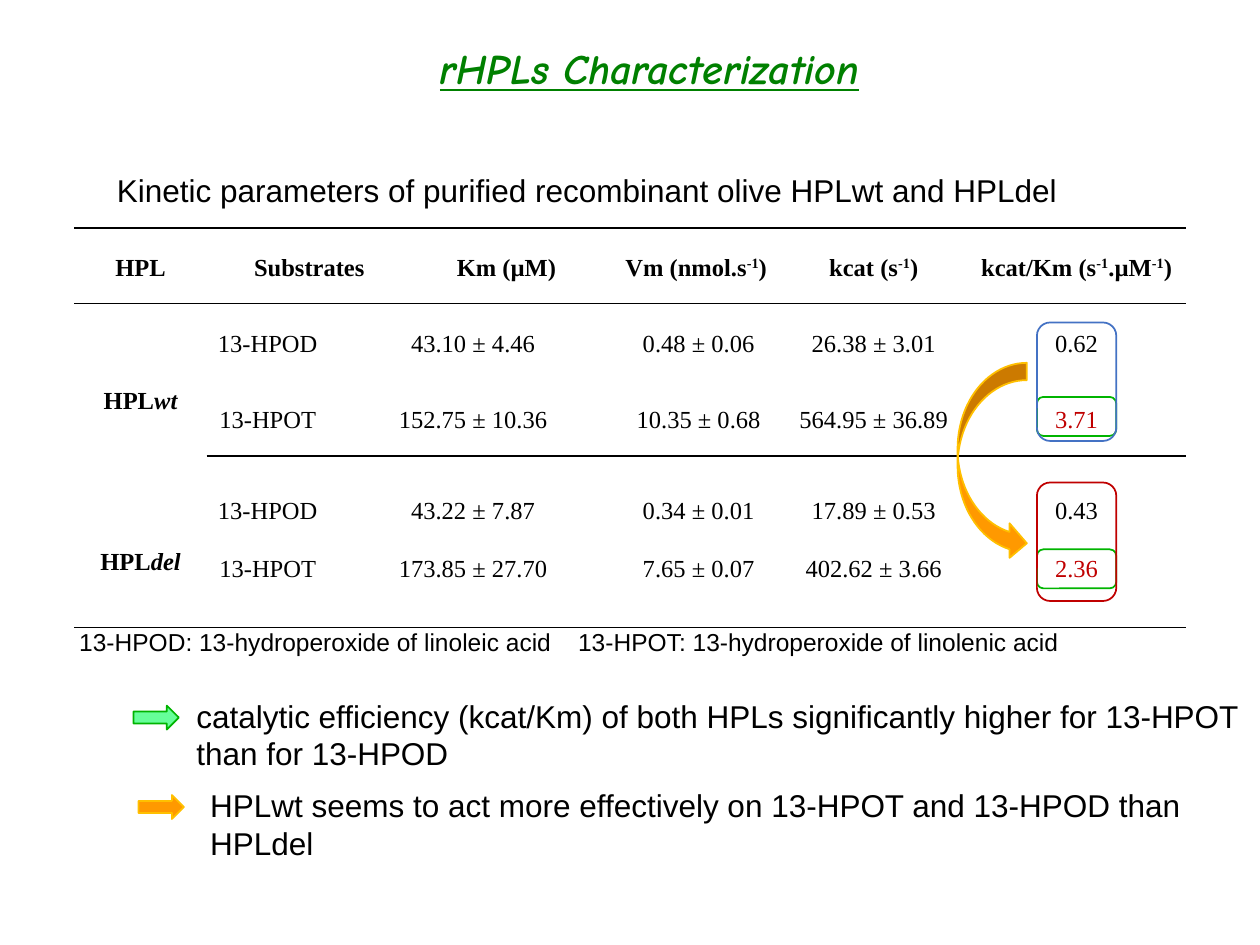
from lxml.etree import SubElement
from pptx import Presentation
from pptx.dml.color import RGBColor
from pptx.enum.shapes import MSO_SHAPE as Shape
from pptx.enum.text import MSO_ANCHOR as Anchor, MSO_AUTO_SIZE as AutoSize, PP_ALIGN as Align
from pptx.oxml import parse_xml
from pptx.oxml.ns import nsdecls, qn
from pptx.util import Inches, Pt

COLORS = {
    "black": "000000", "title": "008000", "green": "00B400", "mint": "66FF99",
    "orange": "FF9900", "gold": "FFC000", "blue": "4472C4", "red": "C00000",
}
NO_TABLE_STYLE = "{2D5ABB26-0587-4C30-8999-92F81FD0307C}"
COLUMN_WIDTHS = [1.05, 0.97, 0.66, 1.5, 0.13, 1.29, 1.49, 1.73]
ROW_HEIGHTS = [0.6, 0.61, 0.6, 0.3, 0.46, 0.6]
SPACER_ROW = 3

# Header texts by column; "^" starts and ends a superscript
HEADERS = {0: "HPL", 1: "Substrates", 3: "Km (µM)", 4: "Vm (nmol.s^-1^)",
           6: "kcat (s^-1^)", 7: "kcat/Km (s^-1^.µM^-1^)"}
VALUE_COLUMNS = [1, 2, 5, 6, 7]
MEASUREMENTS = {
    1: ["13-HPOD", "43.10 ± 4.46", "0.48 ± 0.06", "26.38 ± 3.01", "0.62"],
    2: ["13-HPOT", "152.75 ± 10.36", "10.35 ± 0.68", "564.95 ± 36.89", "3.71"],
    4: ["13-HPOD", "43.22 ± 7.87", "0.34 ± 0.01", "17.89 ± 0.53", "0.43"],
    5: ["13-HPOT", "173.85 ± 27.70", "7.65 ± 0.07", "402.62 ± 3.66", "2.36"],
}
ENZYMES = {1: "wt", 4: "del"}


def rgb(name):
    return RGBColor.from_string(COLORS[name])


def style(paragraph, size, face, color="black", bold=False):
    font = paragraph.font
    font.size, font.name, font.bold = Pt(size), face, bold
    font.color.rgb = rgb(color)


def add_title(slide, text):
    title = slide.shapes.title
    title.left, title.top, title.width, title.height = map(Inches, (2.4, 0.29, 5.51, 0.5))
    frame = title.text_frame
    frame.text = text
    frame.auto_size = AutoSize.NONE
    frame.vertical_anchor = Anchor.TOP
    paragraph = frame.paragraphs[0]
    paragraph.alignment = Align.CENTER
    style(paragraph, 24, "Comic Neue", "title", bold=True)
    paragraph.font.italic = paragraph.font.underline = True


def add_text(slide, box, lines, size=18, tab=None):
    frame = slide.shapes.add_textbox(*map(Inches, box)).text_frame
    frame.word_wrap = True
    frame.text = "\n".join(lines)
    for paragraph in frame.paragraphs:
        if tab:
            stops = SubElement(paragraph._p.get_or_add_pPr(), qn("a:tabLst"))
            SubElement(stops, qn("a:tab"), pos=str(Inches(tab)), algn="l")
        style(paragraph, size, "Arial")


def add_shape(slide, kind, box, line, fill=None, flip=False):
    shape = slide.shapes.add_shape(kind, *map(Inches, box))
    shape.shadow.inherit = False
    shape.line.color.rgb = rgb(line)
    shape.line.width = Pt(1)
    if fill:
        shape.fill.solid()
        shape.fill.fore_color.rgb = rgb(fill)
    else:
        shape.fill.background()
    if flip:
        shape._element.spPr.find(qn("a:xfrm")).set("flipH", "1")


def format_cell(cell, anchor=Anchor.MIDDLE, color="black", bold=False):
    cell.vertical_anchor = anchor
    paragraph = cell.text_frame.paragraphs[0]
    paragraph.alignment = Align.CENTER
    paragraph.line_spacing = 1.15
    style(paragraph, 14, "Times New Roman", color, bold)


def rule_cell(cell, sides):
    properties = cell._tc.get_or_add_tcPr()
    for position, side in enumerate(sides):
        properties.insert(position, parse_xml(
            f'<a:ln{side} {nsdecls("a")} w="12700"><a:solidFill>'
            f'<a:srgbClr val="{COLORS["black"]}"/></a:solidFill></a:ln{side}>'))


def add_kinetics_table(slide):
    table = slide.shapes.add_table(
        len(ROW_HEIGHTS), len(COLUMN_WIDTHS),
        *map(Inches, (0.59, 1.81, sum(COLUMN_WIDTHS), sum(ROW_HEIGHTS)))).table
    table.first_row = table.horz_banding = False
    table._tbl.tblPr.find(qn("a:tableStyleId")).text = NO_TABLE_STYLE
    for column, width in zip(table.columns, COLUMN_WIDTHS):
        column.width = Inches(width)
    for row, height in zip(table.rows, ROW_HEIGHTS):
        row.height = Inches(height)

    # Spans, plain fills and horizontal rules
    spans = [(0, 1, 0, 2), (0, 4, 0, 5), (1, 0, 3, 0), (4, 0, 5, 0)]
    spans += [(row, 2, row, 4) for row in range(1, len(ROW_HEIGHTS))]
    for top, left, bottom, right in spans:
        table.cell(top, left).merge(table.cell(bottom, right))
    for row in range(len(ROW_HEIGHTS)):
        for column in range(len(COLUMN_WIDTHS)):
            cell = table.cell(row, column)
            cell.fill.background()
            cell.margin_left = cell.margin_right = Inches(0.07)
            cell.margin_top = cell.margin_bottom = 0
            if row == 0:
                rule_cell(cell, "TB")
            elif row == 5 or (row == 2 and column > 0) or (row == 4 and column == 0):
                rule_cell(cell, "B")
            if row == SPACER_ROW:
                format_cell(cell)

    # Header row
    for column, text in HEADERS.items():
        cell = table.cell(0, column)
        for index, part in enumerate(text.split("^")):
            run = cell.text_frame.paragraphs[0].add_run()
            run.text = part
            if index % 2:
                run.font._element.set("baseline", "30000")
        format_cell(cell, bold=True)
    table.cell(0, 4).margin_left = Inches(0.16)

    # Enzyme names
    for row, variant in ENZYMES.items():
        cell = table.cell(row, 0)
        cell.text = "HPL"
        suffix = cell.text_frame.paragraphs[0].add_run()
        suffix.text = variant
        suffix.font.italic = True
        format_cell(cell, bold=True)

    # Measured values
    for row, values in MEASUREMENTS.items():
        anchor = Anchor.MIDDLE if row < SPACER_ROW else Anchor.TOP
        for column, value in zip(VALUE_COLUMNS, values):
            cell = table.cell(row, column)
            cell.text = value
            highlighted = column == 7 and values[0] == "13-HPOT"
            format_cell(cell, anchor, "red" if highlighted else "black")


def main():
    presentation = Presentation()
    presentation.slide_width, presentation.slide_height = Inches(10), Inches(7.5)
    slide = presentation.slides.add_slide(presentation.slide_layouts[5])

    add_title(slide, "rHPLs Characterization")
    add_text(slide, (0.83, 1.31, 7.98, 0.4),
             ["Kinetic parameters of purified recombinant olive HPLwt and HPLdel"])
    add_kinetics_table(slide)
    add_text(slide, (0.53, 4.93, 8.12, 0.34),
             ["13-HPOD: 13-hydroperoxide of linoleic acid\t"
              "13-HPOT: 13-hydroperoxide of linolenic acid"], size=14, tab=3.96)

    # Efficiency highlights and the arrow from wt to del
    for top in (3.15, 4.36):
        add_shape(slide, Shape.ROUNDED_RECTANGLE, (8.23, top, 0.63, 0.31), "green")
    add_shape(slide, Shape.CURVED_LEFT_ARROW, (7.6, 2.88, 0.55, 1.57),
              "gold", "orange", flip=True)
    for top, color in ((2.56, "blue"), (3.83, "red")):
        add_shape(slide, Shape.ROUNDED_RECTANGLE, (8.23, top, 0.63, 0.94), color)

    # Conclusions
    add_shape(slide, Shape.RIGHT_ARROW, (1.06, 5.6, 0.36, 0.19), "green", "mint")
    add_text(slide, (1.46, 5.48, 8.54, 0.71),
             ["catalytic efficiency (kcat/Km) of both HPLs significantly higher "
              "for 13-HPOT than for 13-HPOD"])
    add_shape(slide, Shape.RIGHT_ARROW, (1.1, 6.31, 0.36, 0.19), "gold", "orange")
    add_text(slide, (1.57, 6.19, 8.05, 0.71),
             ["HPLwt seems to act more effectively on 13-HPOT and 13-HPOD than",
              "HPLdel"])

    presentation.save("out.pptx")


if __name__ == "__main__":
    main()
